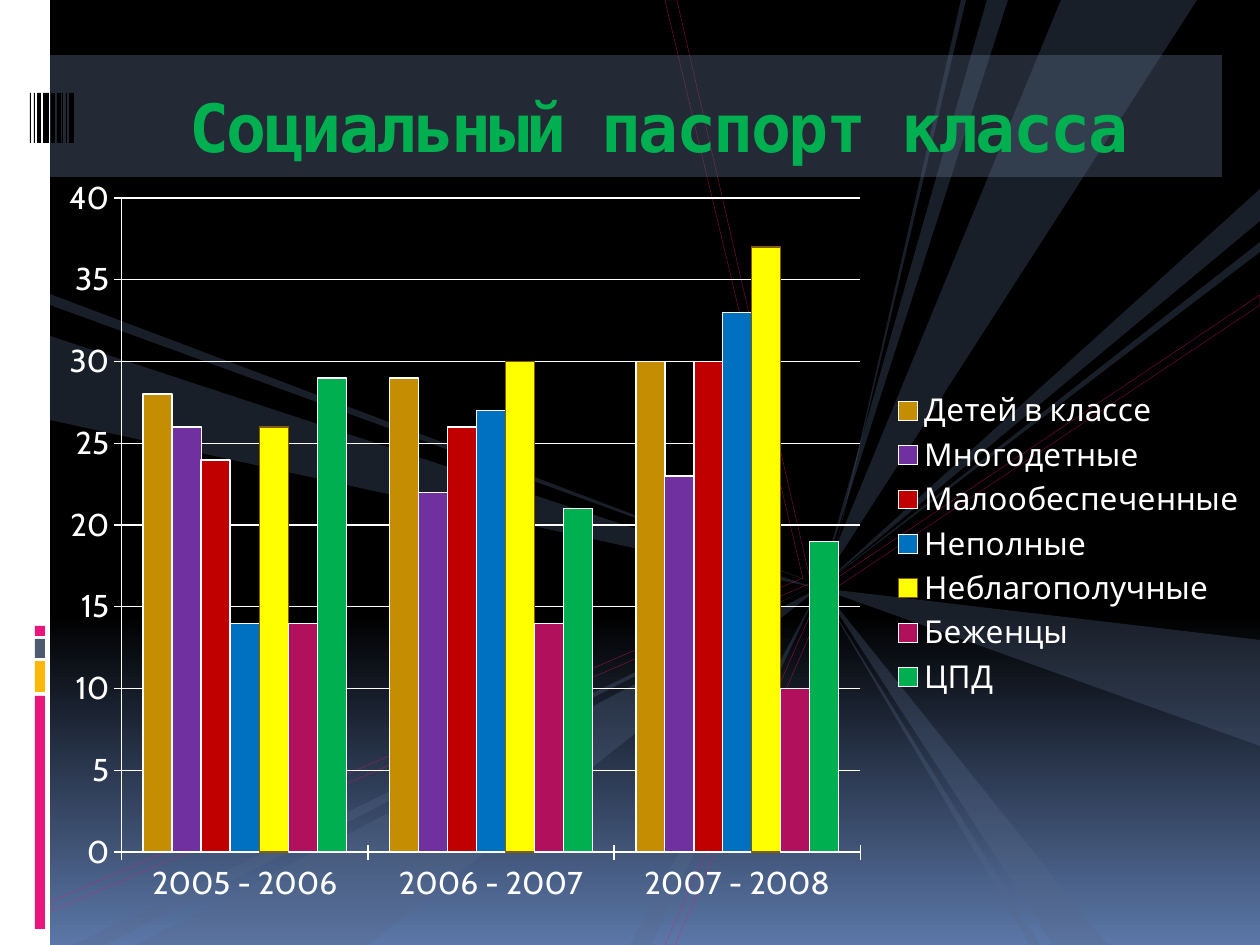
"""Build the class social profile slide with its clustered column chart."""
from copy import deepcopy
from dataclasses import dataclass

from pptx import Presentation
from pptx.chart.data import CategoryChartData
from pptx.dml.color import RGBColor
from pptx.enum.chart import XL_CHART_TYPE, XL_LEGEND_POSITION, XL_TICK_MARK
from pptx.enum.shapes import MSO_SHAPE
from pptx.enum.text import MSO_ANCHOR, MSO_AUTO_SIZE, PP_ALIGN
from pptx.oxml import parse_xml
from pptx.oxml.ns import nsdecls, qn
from pptx.oxml.xmlchemy import OxmlElement
from pptx.util import Pt

PX = 914400 / 126
WIDTH, HEIGHT = 1260, 945
EDGE = 50


@dataclass(frozen=True)
class Theme:
    """Colours, fonts and type sizes of the slide."""
    white: str = "FFFFFF"
    black: str = "000000"
    sky: str = "5B77A8"
    pink: str = "EA157A"
    amber: str = "FEB80A"
    slate: str = "4E5B6F"
    ray: str = "566989"
    band: str = "586A86"
    green: str = "00B050"
    title_font: str = "DejaVu Sans Mono"
    chart_font: str = "Cabin"
    title_size: int = 38
    chart_size: int = 18


THEME = Theme()
HUB = (819, 588)
RAYS = [
    ((830, 573), (966, 0), (961, 0)),
    (HUB, (1061, 0), (1197, 0)),
    (HUB, (1260, 640), (1260, 746)),
    (HUB, (1008, 0), (987, 0)),
    ((820, 585), (1053, 945), (1108, 945)),
    (HUB, (1040, 945), (1030, 945)),
    (HUB, (1260, 189), (1260, 221)),
    (HUB, (1260, 242), (1260, 252)),
    (HUB, (136, 945), (368, 945)),
    ((809, 588), (73, 945), (105, 945)),
    ((816, 588), (EDGE, 336), (EDGE, 420)),
    ((828, 588), (EDGE, 294), (EDGE, 305)),
    (HUB, (630, 945), (651, 945)),
]
OUTLINES = [
    [(665, 945), (822, 588), (1260, 295), (1260, 305), (828, 593), (675, 945)],
    [(52, 901), (52, 911), (811, 583), (677, 0), (665, 0), (803, 578)],
]
MARGIN_BLOCKS = [(696, 233, THEME.pink), (661, 31, THEME.amber),
                 (639, 19, THEME.slate), (626, 10, THEME.pink)]
BARCODE = [(30, 1), (34, 1), (37, 4), (43, 6), (51, 4), (57, 4), (62, 1), (66, 1), (69, 5)]
YEARS = ["2005 - 2006", "2006 - 2007", "2007 - 2008"]
GROUPS = [
    ("Детей в классе", (28, 29, 30), "C58D01", THEME.white, 1),
    ("Многодетные", (26, 22, 23), "7030A0", THEME.white, 0.75),
    ("Малообеспеченные", (24, 26, 30), "C00000", THEME.white, 1),
    ("Неполные", (14, 27, 33), "0070C0", THEME.white, 0.75),
    ("Неблагополучные", (26, 30, 37), "FFFF00", "835E01", 0.75),
    ("Беженцы", (14, 14, 10), "B0105C", THEME.white, 0.75),
    ("ЦПД", (29, 21, 19), THEME.green, THEME.white, 0.75),
]


def emu(*lengths):
    """Turn px lengths into EMU."""
    return [round(length * PX) for length in lengths]


def apply(target, formats):
    """Set each attribute named in a dict of formats."""
    for name, value in formats.items():
        setattr(target, name, value)


def paint(fill, color):
    """Give a fill one solid colour."""
    fill.solid()
    fill.fore_color.rgb = RGBColor.from_string(color)


def stroke(line, color, width):
    """Give a line its colour and its width in points."""
    paint(line.fill, color)
    line.width = Pt(width)


def set_opacity(shape, percent):
    """Make the colours of a shape partly transparent."""
    for color in shape.element.spPr.iter(qn("a:srgbClr")):
        alpha = OxmlElement("a:alpha")
        alpha.set("val", str(percent * 1000))
        color.append(alpha)


def add_bar(page, bounds, color, opacity=100):
    """Add a plain rectangle without an outline."""
    bar = page.shapes.add_shape(MSO_SHAPE.RECTANGLE, *emu(*bounds))
    bar.shadow.inherit = False
    paint(bar.fill, color)
    bar.line.fill.background()
    if opacity < 100:
        set_opacity(bar, opacity)


def add_polygon(page, points):
    """Add a closed outline through the given points."""
    builder = page.shapes.build_freeform(*points[0], scale=PX)
    builder.add_line_segments(points[1:], close=True)
    polygon = builder.convert_to_shape()
    polygon.shadow.inherit = False
    return polygon


def add_ray(page, points):
    """Add a translucent beam of light."""
    ray = add_polygon(page, points)
    paint(ray.fill, THEME.ray)
    ray.line.fill.background()
    set_opacity(ray, 30)


def add_outline(page, points):
    """Add a thin pink outline."""
    outline = add_polygon(page, points)
    outline.fill.background()
    stroke(outline.line, THEME.pink, 0.25)
    set_opacity(outline, 53)


def set_background(page):
    """Fill the page from black down to blue."""
    fill = page.background.fill
    fill.gradient()
    fill.gradient_angle = 270
    stop_list = page.element.find(".//" + qn("a:gsLst"))
    stop_list.insert(1, deepcopy(stop_list[0]))
    colors = [(0, THEME.black), (0.65, THEME.black), (1, THEME.sky)]
    for stop, (position, color) in zip(fill.gradient_stops, colors):
        stop.position = position
        stop.color.rgb = RGBColor.from_string(color)


def add_decoration(page):
    """Add the margin strip, the rays, the title band and the barcode."""
    add_bar(page, (0, 0, EDGE, HEIGHT), THEME.white)
    for top, height, color in MARGIN_BLOCKS:
        add_bar(page, (35, top, 10, height), color)
    for points in OUTLINES:
        add_outline(page, points)
    for points in RAYS:
        add_ray(page, points)
    add_bar(page, (EDGE, 55, 1172, 122), THEME.band, 40)
    for left, width in BARCODE:
        add_bar(page, (left, 93, width, 50), THEME.black)


def fill_title(page, text):
    """Place and format the title in front of the decoration."""
    box = page.shapes.title
    page.shapes.element.append(box.element)
    left, top, width, height = emu(97, 71, 1124, 107)
    apply(box, {"left": left, "top": top, "width": width, "height": height})
    side, upper, lower = emu(13, 9, 6)
    apply(box.text_frame, {
        "margin_left": side, "margin_right": side, "margin_top": upper, "margin_bottom": lower,
        "word_wrap": True, "auto_size": MSO_AUTO_SIZE.NONE, "vertical_anchor": MSO_ANCHOR.MIDDLE})
    para = box.text_frame.paragraphs[0]
    para.alignment = PP_ALIGN.CENTER
    span = para.add_run()
    span.text = text
    apply(span.font, {"name": THEME.title_font, "size": Pt(THEME.title_size), "bold": True})
    span.font.color.rgb = RGBColor.from_string(THEME.green)
    span.font.fill.solid()
    span.font.color.rgb = RGBColor.from_string(THEME.green)
    span.font.language_id = None
    para.runs[0].font
    span._r.get_or_add_rPr().set("spc", "-150")


def set_plot_area(chart, x, y, w, h):
    """Fix the inner plot area as fractions of the chart."""
    values = "".join(f'<c:{name} val="{value:.2f}"/>'
                     for name, value in zip("xywh", (x, y, w, h)))
    layout = parse_xml(
        f'<c:layout {nsdecls("c")}><c:manualLayout><c:layoutTarget val="inner"/>'
        f'<c:xMode val="edge"/><c:yMode val="edge"/>{values}</c:manualLayout></c:layout>')
    area = chart.element.find(".//" + qn("c:plotArea"))
    for old in area.findall(qn("c:layout")):
        area.remove(old)
    area.insert(0, layout)


def add_column_chart(page):
    """Add the chart of family groups by school year."""
    data = CategoryChartData()
    data.categories = YEARS
    for name, values, *_ in GROUPS:
        data.add_series(name, values)
    chart = page.shapes.add_chart(
        XL_CHART_TYPE.COLUMN_CLUSTERED, *emu(49, 168, 1211, 752), data).chart
    apply(chart, {"has_title": False, "has_legend": True})
    apply(chart.font, {"name": THEME.chart_font, "size": Pt(THEME.chart_size)})
    chart.font.color.rgb = RGBColor.from_string(THEME.white)
    apply(chart.legend, {"position": XL_LEGEND_POSITION.RIGHT, "include_in_layout": False})
    apply(chart.plots[0], {"gap_width": 150, "overlap": 0, "vary_by_categories": False})
    for series, (_, _, color, edge, width) in zip(chart.plots[0].series, GROUPS):
        paint(series.format.fill, color)
        stroke(series.format.line, edge, width)
    for axis in (chart.category_axis, chart.value_axis):
        axis.major_tick_mark = XL_TICK_MARK.CROSS
        stroke(axis.format.line, THEME.white, 0.75)
    apply(chart.value_axis, {"minimum_scale": 0, "maximum_scale": 40, "major_unit": 5,
                             "has_major_gridlines": True})
    stroke(chart.value_axis.major_gridlines.format.line, THEME.white, 0.75)
    set_plot_area(chart, 0.06, 0.04, 0.61, 0.87)


def main():
    """Build and save the deck."""
    deck = Presentation()
    deck.slide_width, deck.slide_height = emu(WIDTH, HEIGHT)
    page = deck.slides.add_slide(deck.slide_layouts[5])
    set_background(page)
    add_decoration(page)
    fill_title(page, "Социальный паспорт класса")
    add_column_chart(page)
    deck.save("out.pptx")


if __name__ == "__main__":
    main()
